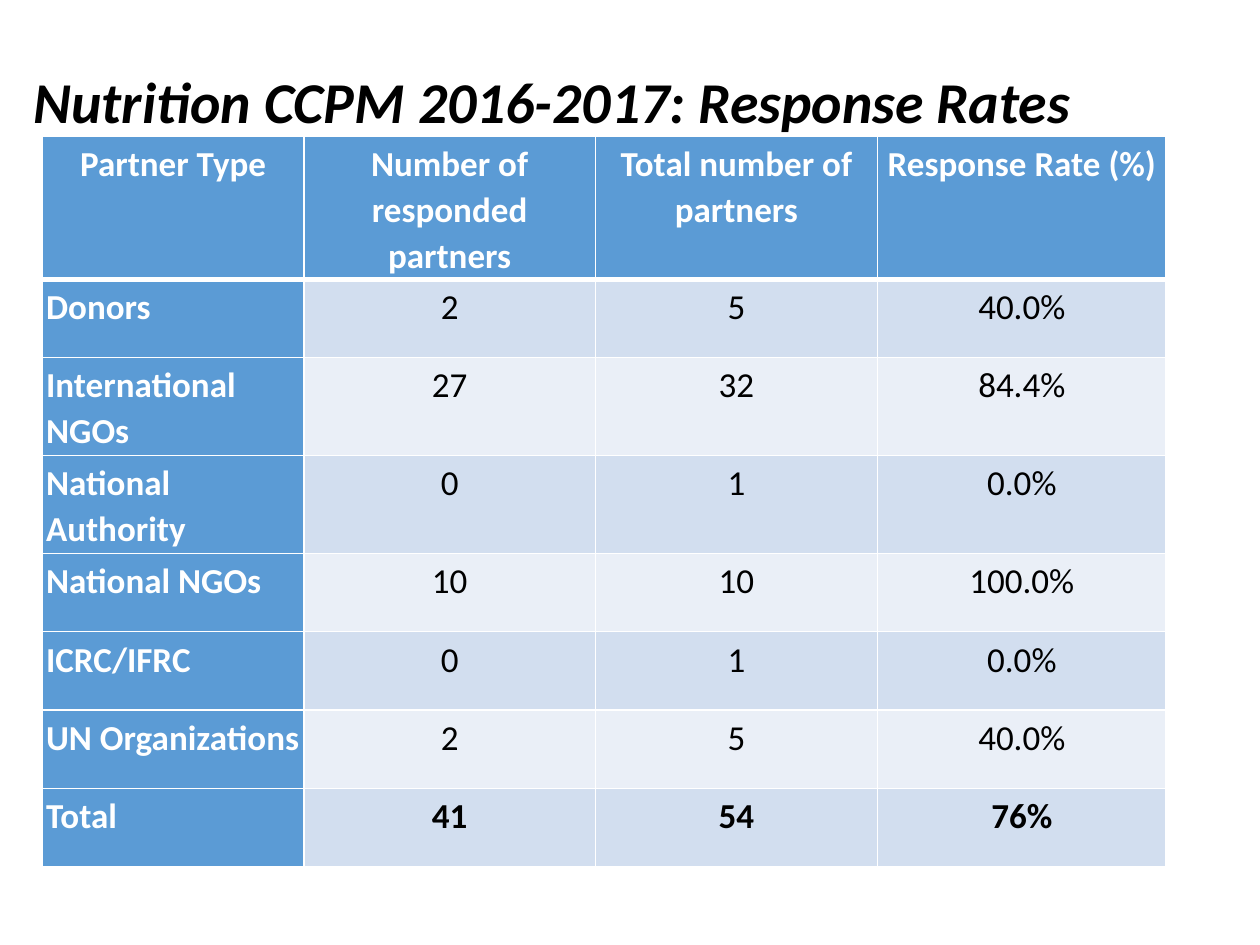
import pptx
import pptx.dml.color
import pptx.enum.text
import pptx.oxml
import pptx.oxml.ns
import pptx.util
from pptx.util import Cm

COLORS = {
    "text": "000000",
    "white": "FFFFFF",
    "header": "5B9BD5",
    "odd_row": "D2DEEF",
    "even_row": "EAEFF7",
}
ALIGN = pptx.enum.text.PP_ALIGN
ANCHOR = pptx.enum.text.MSO_ANCHOR


def write_text(frame, text, size=20, color="text", bold=False, italic=False,
               align=ALIGN.LEFT, spacing=1.07):
    paragraph = frame.paragraphs[0]
    paragraph.alignment = align
    paragraph.line_spacing = spacing
    run = paragraph.add_run()
    run.text = text
    run.font.name = "Calibri"
    run.font.size = pptx.util.Pt(size)
    run.font.bold = bold
    run.font.italic = italic
    run.font.color.rgb = pptx.dml.color.RGBColor.from_string(COLORS[color])


def add_borders(cell, **widths):
    for side in "LRTB":
        width = pptx.util.Pt(widths.get(side, 1))
        cell._tc.get_or_add_tcPr().append(pptx.oxml.parse_xml(
            f'<a:ln{side} {pptx.oxml.ns.nsdecls("a")} w="{width}"><a:solidFill>'
            f'<a:srgbClr val="{COLORS["white"]}"/></a:solidFill></a:ln{side}>'))


presentation = pptx.Presentation()
presentation.slide_width = Cm(25.4)
presentation.slide_height = Cm(19.05)
slide = presentation.slides.add_slide(presentation.slide_layouts[6])

# Title
title = slide.shapes.add_textbox(Cm(0.43), Cm(1.07), Cm(24.56), Cm(2.08)).text_frame
title.word_wrap = True
title.vertical_anchor = ANCHOR.MIDDLE
write_text(title, "Nutrition CCPM 2016-2017: Response Rates",
           size=33, bold=True, italic=True, spacing=0.9)

# Response rates by partner type
response_rates = [
    ("Partner Type", "Number of responded partners", "Total number of partners",
     "Response Rate (%)"),
    ("Donors", "2", "5", "40.0%"),
    ("International NGOs", "27", "32", "84.4%"),
    ("National Authority", "0", "1", "0.0%"),
    ("National NGOs", "10", "10", "100.0%"),
    ("ICRC/IFRC", "0", "1", "0.0%"),
    ("UN Organizations", "2", "5", "40.0%"),
    ("Total", "41", "54", "76%"),
]
column_widths = [5.28, 5.87, 5.69, 5.82]
header_height, row_height = 2.26, 1.58
last_row = len(response_rates) - 1

rates_table = slide.shapes.add_table(
    len(response_rates), len(column_widths), Cm(0.85), Cm(2.75),
    Cm(sum(column_widths)), Cm(header_height + last_row * row_height)).table
for column, width in zip(rates_table.columns, column_widths):
    column.width = Cm(width)

for r, values in enumerate(response_rates):
    rates_table.rows[r].height = Cm(row_height if r else header_height)
    for c, value in enumerate(values):
        cell = rates_table.cell(r, c)
        is_heading = r == 0 or c == 0
        cell.margin_left = cell.margin_right = Cm(0.08)
        cell.margin_top = cell.margin_bottom = Cm(0.08)
        cell.vertical_anchor = ANCHOR.TOP

        # A thicker rule separates the header from the body
        add_borders(cell, T=3 if r == 1 else 1, B=3 if r == 0 else 1)
        band = "odd_row" if r % 2 else "even_row"
        cell.fill.solid()
        cell.fill.fore_color.rgb = pptx.dml.color.RGBColor.from_string(
            COLORS["header" if is_heading else band])

        write_text(cell.text_frame, value,
                   color="white" if is_heading else "text",
                   bold=is_heading or r == last_row,
                   align=ALIGN.LEFT if r and c == 0 else ALIGN.CENTER)

presentation.save("out.pptx")
